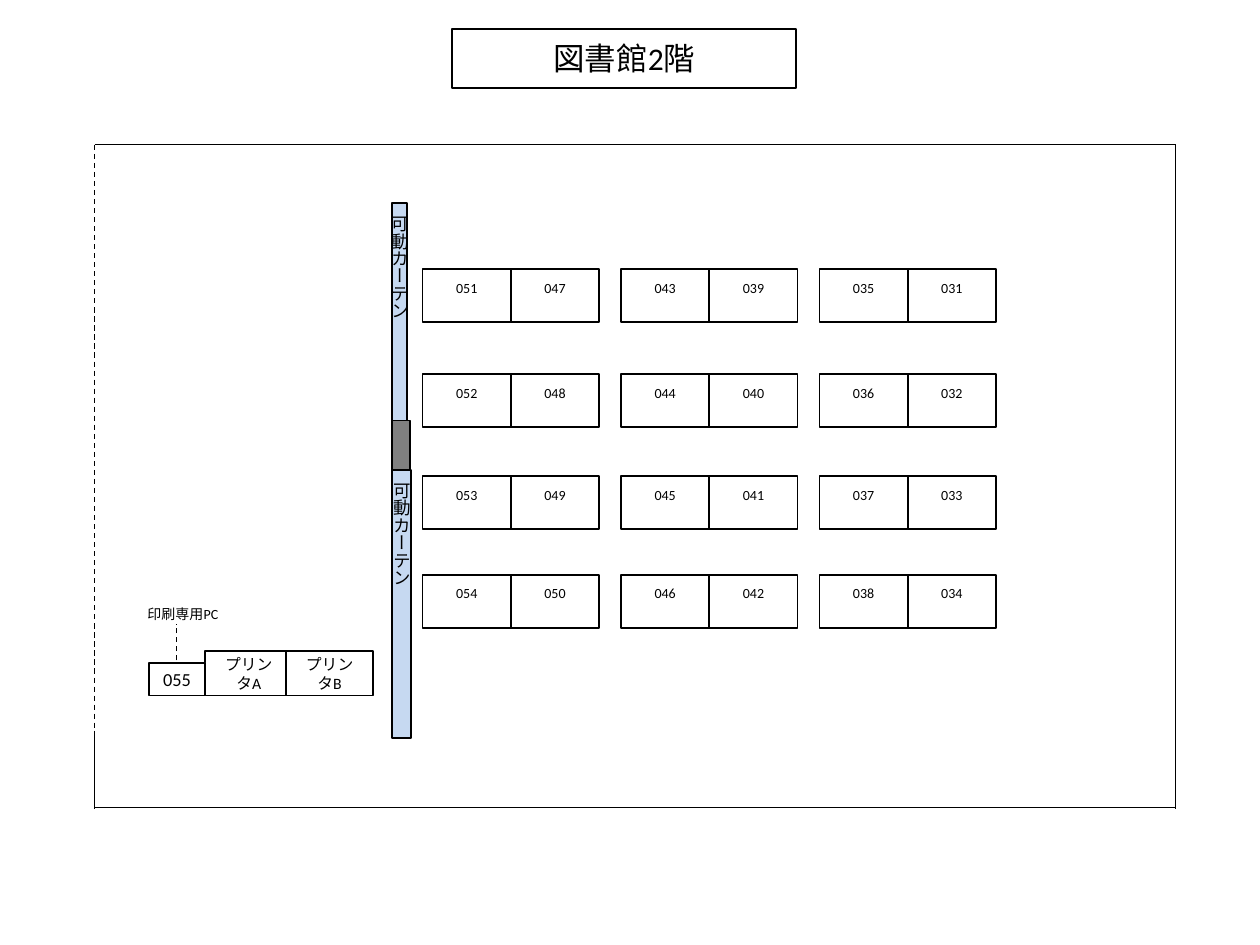
"""Floor plan of the library's second floor with numbered PC desks."""
from dataclasses import dataclass

from lxml import etree
from pptx import Presentation
from pptx import util as u
from pptx.dml.color import RGBColor
from pptx.enum import dml, shapes, text
from pptx.oxml.ns import qn

COLORS = {"ink": "000000", "paper": "FFFFFF", "curtain": "C6D9F1", "pillar": "808080"}
FONT = "Calibri"
ROW_TOPS = (5.43, 7.54, 9.6, 11.59)
DESK_LEFT, DESK_WIDTH, DESK_HEIGHT = 8.52, 1.78, 1.07
PAIR_PITCH, FIRST_NUMBER = 4.0, 51


@dataclass
class Box:
    left: float
    top: float
    width: float
    height: float
    label: str = ""
    size: float = 8
    fill: str = "paper"
    vertical: bool = False
    bottom_inset: float = 0.13


@dataclass
class Wall:
    x1: float
    y1: float
    x2: float
    y2: float
    dashed: bool = False


WALLS = (
    Wall(1.91, 2.92, 1.91, 16.33, True),
    Wall(1.91, 2.92, 23.7, 2.92),
    Wall(23.7, 2.92, 23.7, 16.3),
    Wall(1.91, 16.28, 23.7, 16.28),
    Wall(1.91, 14.73, 1.91, 16.28),
    Wall(3.56, 13.31, 3.56, 12.57, True),
)
FIXTURES = (
    Box(9.12, 0.58, 6.93, 1.19, "図書館2階", 18),
    Box(4.14, 13.13, 1.75, 0.89, "プリンタA", 9),
    Box(7.9, 4.09, 0.3, 4.39, "可動カーテン", 10, "curtain", True),
    Box(7.9, 8.48, 0.36, 0.99, fill="pillar"),
    Box(7.9, 9.47, 0.38, 5.41, "可動カーテン", 10, "curtain", True),
    Box(3.0, 13.36, 1.14, 0.66, "055", 10.5),
    Box(5.77, 13.13, 1.75, 0.89, "プリンタB", 9),
)


def rgb(name: str) -> RGBColor:
    """Look up a named colour."""
    return RGBColor.from_string(COLORS[name])


def style_text(p, label: str, size: float) -> None:
    """Write a label in the plan's font."""
    p.text = label
    p.font.name = FONT
    p.font.size = u.Pt(size)
    p.font.color.rgb = rgb("ink")


def draw_box(slide, box: Box) -> None:
    """Draw an outlined rectangle with an optional centred label."""
    sp = slide.shapes.add_shape(
        shapes.MSO_SHAPE.RECTANGLE,
        *(u.Cm(v) for v in (box.left, box.top, box.width, box.height)))
    sp.shadow.inherit = False
    sp.fill.solid()
    sp.fill.fore_color.rgb = rgb(box.fill)
    sp.line.color.rgb = rgb("ink")
    sp.line.width = u.Pt(1)
    if not box.label:
        return
    tf = sp.text_frame
    tf.word_wrap = True
    tf.vertical_anchor = text.MSO_ANCHOR.MIDDLE
    tf.margin_bottom = u.Cm(box.bottom_inset)
    if box.vertical:
        sp.element.txBody.find(qn("a:bodyPr")).set("vert", "eaVert")
    p = tf.paragraphs[0]
    p.alignment = text.PP_ALIGN.CENTER
    style_text(p, box.label, box.size)


def draw_wall(slide, wall: Wall) -> None:
    """Draw a thin straight line, solid or dashed."""
    line = slide.shapes.add_connector(
        shapes.MSO_CONNECTOR.STRAIGHT,
        *(u.Cm(v) for v in (wall.x1, wall.y1, wall.x2, wall.y2)))
    line.line.color.rgb = rgb("ink")
    line.line.width = u.Pt(0.75)
    if wall.dashed:
        line.line.dash_style = dml.MSO_LINE.DASH
    etree.SubElement(line.element.spPr, qn("a:effectLst"))


def draw_desks(slide) -> None:
    """Draw the grid of desks, numbered down each column from right to left."""
    for col in range(6):
        pair, half = divmod(col, 2)
        left = DESK_LEFT + pair * PAIR_PITCH + half * DESK_WIDTH
        for row, top in enumerate(ROW_TOPS):
            number = FIRST_NUMBER - col * len(ROW_TOPS) + row
            draw_box(slide, Box(left, top, DESK_WIDTH, DESK_HEIGHT,
                                f"{number:03d}", bottom_inset=0.45))


def draw_caption(slide) -> None:
    """Label the PC reserved for printing."""
    sp = slide.shapes.add_textbox(u.Cm(2.72), u.Cm(12.09), u.Cm(2.18), u.Cm(0.61))
    tf = sp.text_frame
    tf.word_wrap = True
    tf.auto_size = text.MSO_AUTO_SIZE.SHAPE_TO_FIT_TEXT
    style_text(tf.paragraphs[0], "印刷専用PC", 8)


def main() -> None:
    """Build and save the plan."""
    prs = Presentation()
    prs.slide_width, prs.slide_height = u.Cm(25.4), u.Cm(19.05)
    slide = prs.slides.add_slide(prs.slide_layouts[6])
    for wall in WALLS:
        draw_wall(slide, wall)
    draw_desks(slide)
    for box in FIXTURES:
        draw_box(slide, box)
    draw_caption(slide)
    prs.save("out.pptx")


if __name__ == "__main__":
    main()
